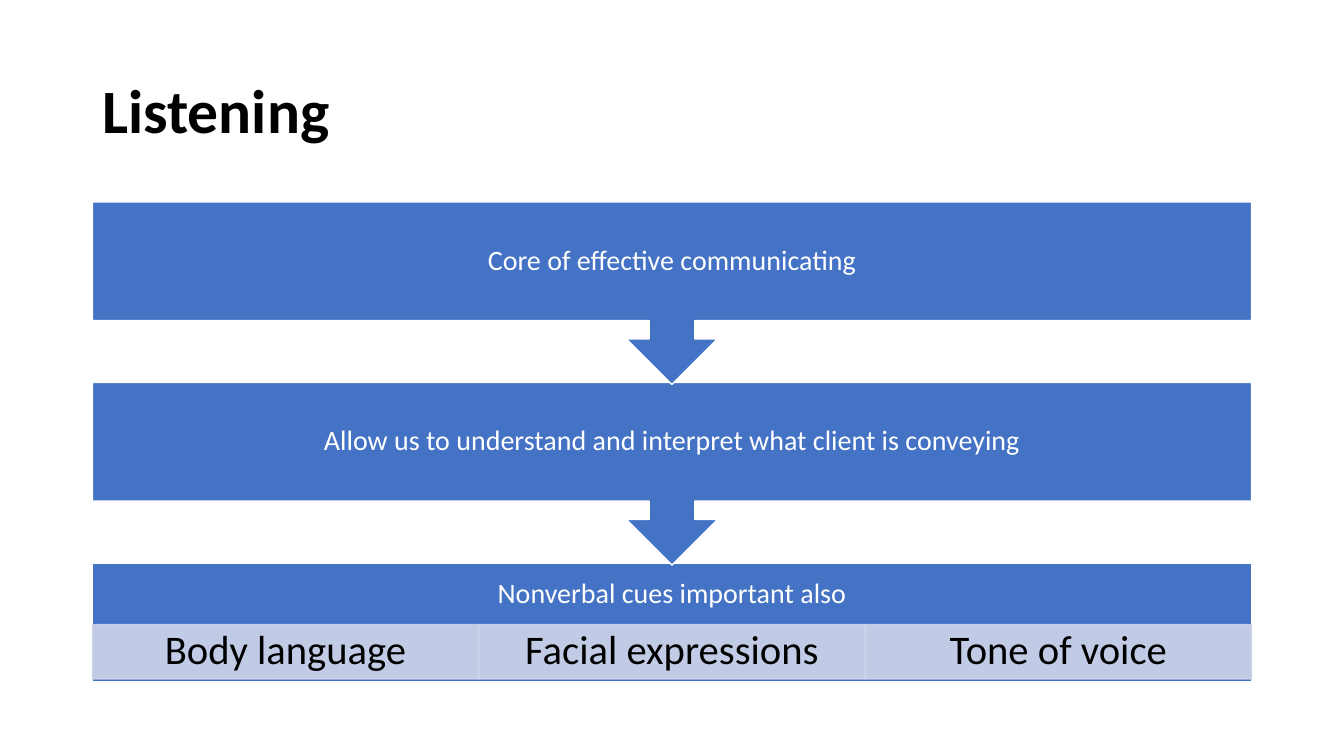
import pptx
import pptx.dml.color
import pptx.enum.shapes
import pptx.enum.text
import pptx.oxml
import pptx.oxml.ns
import pptx.util

Cm = pptx.util.Cm
RGBColor = pptx.dml.color.RGBColor
SHAPE = pptx.enum.shapes.MSO_SHAPE
ALIGN = pptx.enum.text.PP_ALIGN

BLACK = RGBColor(0x00, 0x00, 0x00)
WHITE = RGBColor(0xFF, 0xFF, 0xFF)
BLUE = RGBColor(0x44, 0x72, 0xC4)
PALE_BLUE = RGBColor(0xCF, 0xD5, 0xEA)

STEPS = [
    "Core of effective communicating",
    "Allow us to understand and interpret what client is conveying",
]
LAST_STEP = "Nonverbal cues important also"
CUES = ["Body language", "Facial expressions", "Tone of voice"]


def write(shape, text, size, color, bold=False, align=ALIGN.CENTER,
          insets=(0.4, 0.4, 0.4, 0.4)):
    """Fill a shape with one paragraph; insets are left, top, right, bottom in cm."""
    frame = shape.text_frame
    frame.word_wrap = True
    frame.vertical_anchor = pptx.enum.text.MSO_ANCHOR.MIDDLE
    (frame.margin_left, frame.margin_top,
     frame.margin_right, frame.margin_bottom) = map(Cm, insets)
    paragraph = frame.paragraphs[0]
    paragraph.alignment = align
    paragraph.line_spacing = 0.9
    run = paragraph.add_run()
    run.text = text
    run.font.name = "Calibri"
    run.font.size = pptx.util.Pt(size)
    run.font.bold = bold
    run.font.color.rgb = color


def set_opacity(fill_format_parent, percent):
    """Make every solid colour below the given XML element partly transparent."""
    for color in fill_format_parent.iter(pptx.oxml.ns.qn("a:srgbClr")):
        color.append(pptx.oxml.parse_xml(
            f'<a:alpha {pptx.oxml.ns.nsdecls("a")} val="{percent * 1000}"/>'))


def add_block(slide, kind, left, top, width, height, fill, line):
    block = slide.shapes.add_shape(kind, Cm(left), Cm(top), Cm(width), Cm(height))
    block.shadow.inherit = False
    block.fill.solid()
    block.fill.fore_color.rgb = fill
    block.line.color.rgb = line
    block.line.width = pptx.util.Pt(1)
    return block


def add_title(slide, left, top, width, height):
    title = slide.shapes.add_textbox(Cm(left), Cm(top), Cm(width), Cm(height))
    write(title, "Listening", 44, BLACK, bold=True, align=ALIGN.LEFT,
          insets=(0.25, 0.13, 0.25, 0.13))


def add_last_step(slide, left, top, width, height):
    """Draw the closing block with its row of cues along the lower part."""
    cue_top, cue_height = 1.55, 1.37
    step = add_block(slide, SHAPE.RECTANGLE, left, top, width, height, BLUE, WHITE)
    write(step, LAST_STEP, 20, WHITE, insets=(0.4, 0.4, 0.4, height - 1.2))
    cue_width = width / len(CUES)
    for column, text in enumerate(CUES):
        cue = add_block(slide, SHAPE.RECTANGLE, left + column * cue_width,
                        top + cue_top, cue_width, cue_height, PALE_BLUE, PALE_BLUE)
        set_opacity(cue.element.spPr, 90)
        write(cue, text, 29, BLACK, insets=(0.58, 0.1, 0.58, 0.1))


def add_process(slide, left, top, width, height):
    """Stack the steps from the last upwards, so each arrow lies over the next block."""
    callout_height, last_height = 4.6, 3
    pitch = (height - last_height) / len(STEPS)
    add_last_step(slide, left, top + height - last_height, width, last_height)
    for row, text in reversed(list(enumerate(STEPS))):
        step = add_block(slide, SHAPE.DOWN_ARROW_CALLOUT, left, top + row * pitch,
                         width, callout_height, BLUE, WHITE)
        write(step, text, 20, WHITE)


def main():
    presentation = pptx.Presentation()
    presentation.slide_width = Cm(33.87)
    presentation.slide_height = Cm(19.05)
    slide = presentation.slides.add_slide(presentation.slide_layouts[6])
    add_title(slide, 2.33, 1.01, 29.21, 3.68)
    add_process(slide, 2.33, 5.09, 29.21, 12.1)
    presentation.save("out.pptx")


if __name__ == "__main__":
    main()
